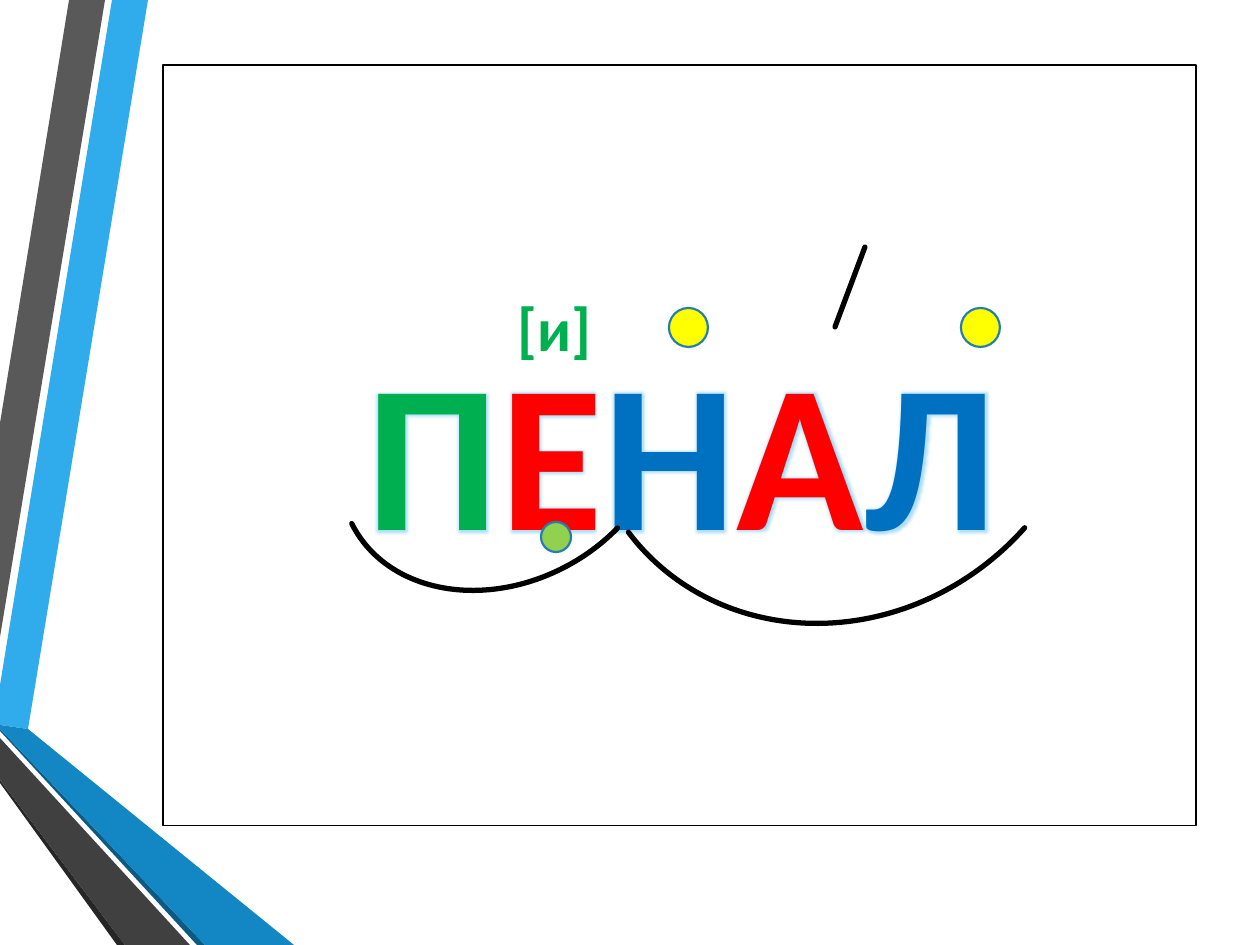
from lxml import etree
from pptx import Presentation
from pptx.dml.color import RGBColor
from pptx.enum.shapes import MSO_CONNECTOR, MSO_SHAPE
from pptx.enum.text import MSO_ANCHOR, MSO_AUTO_SIZE, PP_ALIGN
from pptx.oxml import parse_xml
from pptx.oxml.ns import nsdecls, qn
from pptx.util import Emu, Pt

PX = 914400 // 126
FONT = "Calibri"
BLACK = RGBColor(0x00, 0x00, 0x00)
GREEN = RGBColor(0x00, 0xB0, 0x50)
RED = RGBColor(0xFF, 0x00, 0x00)
BLUE = RGBColor(0x00, 0x70, 0xC0)
YELLOW = RGBColor(0xFF, 0xFF, 0x00)
LIME = RGBColor(0x92, 0xD0, 0x50)
RIM = RGBColor(0x24, 0x7F, 0xAF)
SKY = RGBColor(0x30, 0xAC, 0xEC)
OCEAN = RGBColor(0x12, 0x87, 0xC3)
NAVY = RGBColor(0x0C, 0x5A, 0x82)
GREY = RGBColor(0x59, 0x59, 0x59)
DARK_GREY = RGBColor(0x40, 0x40, 0x40)
CHARCOAL = RGBColor(0x26, 0x26, 0x26)


class SlideBuilder:
    def __init__(self, slide):
        self.shapes = slide.shapes

    def paint(self, shape, fill=None, line=None, width=1):
        shape.shadow.inherit = False
        if fill is None:
            shape.fill.background()
        else:
            shape.fill.solid()
            shape.fill.fore_color.rgb = fill
        if line is None:
            shape.line.fill.background()
        else:
            shape.line.color.rgb = line
            shape.line.width = Pt(width)
        return shape

    def preset(self, kind, box, **style):
        shape = self.shapes.add_shape(kind, *[Emu(n * PX) for n in box])
        return self.paint(shape, **style)

    def ribbon(self, points, fill):
        builder = self.shapes.build_freeform(*points[0], scale=PX)
        builder.add_line_segments(points[1:], close=True)
        self.paint(builder.convert_to_shape(), fill)

    def dot(self, x, y, size, fill):
        self.preset(MSO_SHAPE.OVAL, (x, y, size, size), fill=fill, line=RIM, width=1.25)

    def arc(self, box, rotation, start, end):
        shape = self.preset(MSO_SHAPE.ARC, box, line=BLACK, width=3)
        shape.rotation = rotation
        shape.adjustments[0] = start
        shape.adjustments[1] = end
        shape.element.spPr.find(qn("a:xfrm")).set("flipH", "1")
        self.round_cap(shape)

    def stroke(self, x1, y1, x2, y2):
        points = [Emu(n * PX) for n in (x1, y1, x2, y2)]
        line = self.shapes.add_connector(MSO_CONNECTOR.STRAIGHT, *points)
        line.line.color.rgb = BLACK
        line.line.width = Pt(3)
        self.round_cap(line)
        etree.SubElement(line.element.spPr, qn("a:effectLst"))

    def round_cap(self, shape):
        shape.element.spPr.find(qn("a:ln")).set("cap", "rnd")

    def run(self, paragraph, text, size, color):
        run = paragraph.add_run()
        run.text = text
        run.font.name = FONT
        run.font.size = Pt(size)
        run.font.bold = True
        run.font.color.rgb = color
        return run

    def word(self, box, letters, indent, drop):
        shape = self.preset(MSO_SHAPE.RECTANGLE, box, line=BLACK, width=0.75)
        frame = shape.text_frame
        frame.word_wrap = True
        frame.vertical_anchor = MSO_ANCHOR.MIDDLE
        frame.margin_left = Emu(indent * PX)
        frame.margin_top = Emu(drop * PX)
        frame.margin_bottom = 0
        paragraph = frame.paragraphs[0]
        paragraph.alignment = PP_ALIGN.LEFT
        for letter, color in letters:
            self.decorate(self.run(paragraph, letter, 120, color))

    def decorate(self, run):
        # Thin outline, soft blue glow and slight letter spacing
        properties = run.font._element
        properties.set("spc", "50")
        properties.insert(0, parse_xml(
            f'<a:ln {nsdecls("a")} w="9525"><a:solidFill>'
            f'<a:srgbClr val="{BLACK}"/></a:solidFill></a:ln>'))
        properties.find(qn("a:solidFill")).addnext(parse_xml(
            f'<a:effectLst {nsdecls("a")}><a:glow rad="38100"><a:srgbClr val="{SKY}">'
            '<a:alpha val="40000"/></a:srgbClr></a:glow></a:effectLst>'))

    def label(self, box, text, size, color):
        frame = self.shapes.add_textbox(*[Emu(n * PX) for n in box]).text_frame
        frame.word_wrap = False
        frame.auto_size = MSO_AUTO_SIZE.SHAPE_TO_FIT_TEXT
        paragraph = frame.paragraphs[0]
        paragraph.space_after = Pt(6.8)
        self.run(paragraph, text, size, color)


def main():
    presentation = Presentation()
    presentation.slide_width = Emu(1260 * PX)
    presentation.slide_height = Emu(945 * PX)
    builder = SlideBuilder(presentation.slides.add_slide(presentation.slide_layouts[6]))

    # Folded ribbons on the left
    builder.ribbon([(0, 685), (0, 725), (28, 729), (148, 0), (112, 0)], SKY)
    builder.ribbon([(105, 0), (69, 0), (0, 423), (0, 637)], GREY)
    builder.ribbon([(0, 780), (0, 783), (117, 945), (125, 945)], CHARCOAL)
    builder.ribbon([(0, 729), (0, 731), (197, 945), (205, 945)], NAVY)
    builder.ribbon([(0, 729), (205, 945), (294, 945), (28, 729), (0, 725)], OCEAN)
    builder.ribbon([(0, 780), (125, 945), (190, 945), (0, 738)], DARK_GREY)

    # Framed word
    letters = zip("ПЕНАЛ", (GREEN, RED, BLUE, RED, BLUE))
    builder.word((163, 65, 1033, 761), letters, indent=204, drop=2)

    # Syllable arcs and stress mark
    builder.arc((367, 276, 272, 340), 241.5, 161.21, 15.54)
    builder.arc((596, 107, 485, 529), 229.9, 160.38, 5.94)
    builder.stroke(865, 247, 835, 327)

    # Sound marks
    builder.dot(541, 522, 30, LIME)
    for x in (669, 961):
        builder.dot(x, 308, 39, YELLOW)
    builder.label((505, 284, 100, 87), "[и]", 35, GREEN)

    presentation.save("out.pptx")


if __name__ == "__main__":
    main()
